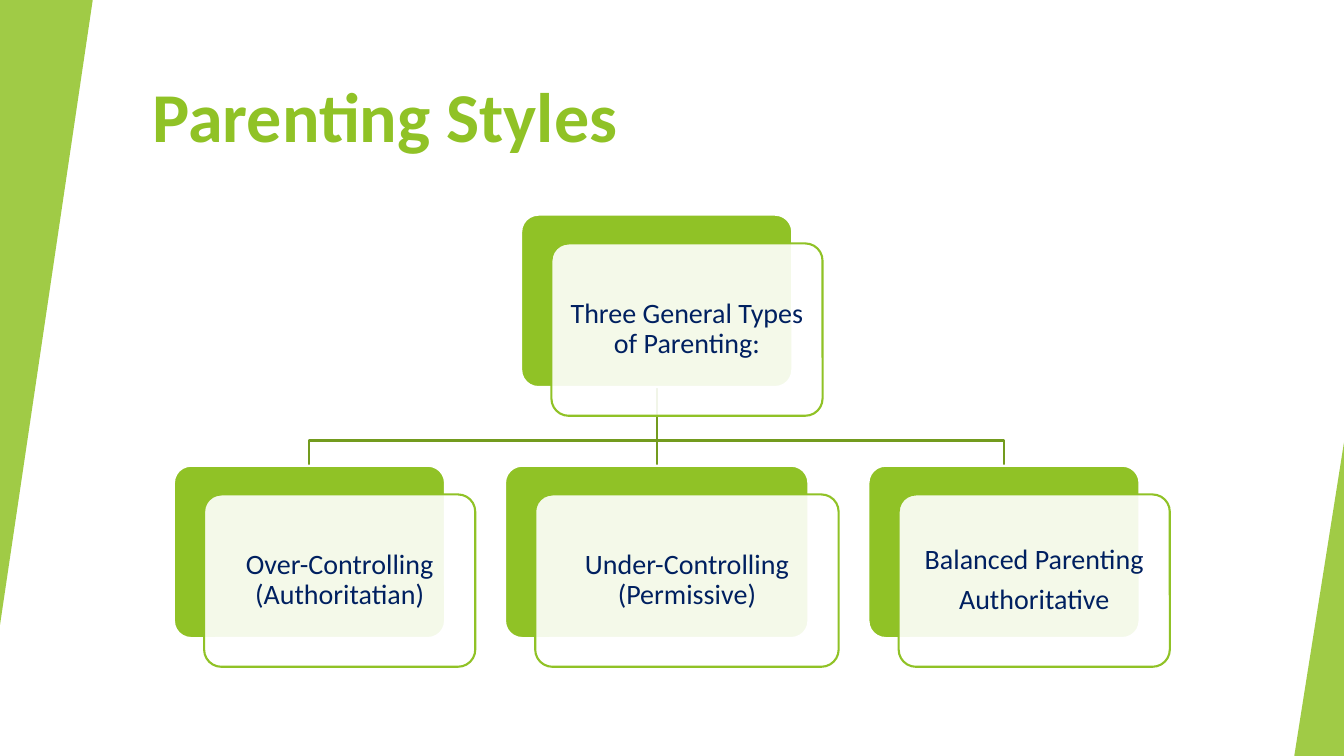
from lxml.etree import SubElement
from pptx import Presentation
from pptx.dml.color import RGBColor
from pptx.enum.shapes import MSO_SHAPE
from pptx.enum.text import MSO_ANCHOR, PP_ALIGN
from pptx.oxml.ns import qn
from pptx.util import Inches, Pt

GREEN, DARK_GREEN, NAVY, WHITE = "90C226", "739B1E", "002060", "FFFFFF"
COLS, ROWS = 133.33, 75  # grid over the slide


def rgb(value):
    return RGBColor.from_string(value)


class SlideBuilder:
    font = "Calibri"
    line_width = Pt(1.5)

    def __init__(self, prs):
        self.s = prs.slides.add_slide(prs.slide_layouts[5])
        self.col = prs.slide_width / COLS
        self.row = prs.slide_height / ROWS

    def box(self, x, y, w, h):
        return [round(v) for v in (x * self.col, y * self.row, w * self.col, h * self.row)]

    def title(self, text, *area):
        sp = self.s.shapes.title
        sp.left, sp.top, sp.width, sp.height = self.box(*area)
        tf = sp.text_frame
        tf.text = text
        tf.vertical_anchor = MSO_ANCHOR.TOP
        p = tf.paragraphs[0]
        p.alignment = PP_ALIGN.LEFT
        self.style(p, 50, GREEN, bold=True)

    def style(self, p, size, color, bold=False):
        f = p.font
        f.name, f.size, f.bold = self.font, Pt(size), bold
        f.color.rgb = rgb(color)

    def shape(self, kind, area, adj, fill, alpha=100, line=None):
        sp = self.s.shapes.add_shape(kind, *self.box(*area))
        sp.shadow.inherit = False
        sp.adjustments[0] = adj
        sp.fill.solid()
        sp.fill.fore_color.rgb = rgb(fill)
        if alpha < 100:
            clr = sp.fill._xPr.find(qn("a:solidFill"))[0]
            SubElement(clr, qn("a:alpha")).set("val", str(alpha * 1000))
        if line:
            sp.line.color.rgb = rgb(line)
            sp.line.width = self.line_width
        else:
            sp.line.fill.background()
        return sp

    def wedge(self, *area, rotation=0):
        sp = self.shape(MSO_SHAPE.ISOSCELES_TRIANGLE, area, 1, GREEN, alpha=85)
        sp.rotation = rotation

    def branch(self, *points):
        pts = [(round(x * self.col), round(y * self.row)) for x, y in points]
        builder = self.s.shapes.build_freeform(*pts[0])
        builder.add_line_segments(pts[1:], close=False)
        sp = builder.convert_to_shape()
        sp.shadow.inherit = False
        sp.fill.background()
        sp.line.color.rgb = rgb(DARK_GREEN)
        sp.line.width = self.line_width

    def card(self, center, top, width, lines, height=17.1, offset=(3, 2.85), inset=0.13):
        left = center - width / 2
        self.shape(MSO_SHAPE.ROUNDED_RECTANGLE, (left, top, width, height), 0.1, GREEN, line=WHITE)
        front = (left + offset[0], top + offset[1], width, height)
        sp = self.shape(MSO_SHAPE.ROUNDED_RECTANGLE, front, 0.1, WHITE, alpha=90, line=GREEN)
        tf = sp.text_frame
        tf.word_wrap = True
        tf.vertical_anchor = MSO_ANCHOR.MIDDLE
        tf.margin_left = tf.margin_right = tf.margin_top = tf.margin_bottom = Inches(inset)
        tf.text = "\n".join(lines)
        for p in tf.paragraphs:
            p.alignment = PP_ALIGN.CENTER
            p.line_spacing = 0.9
            p.space_after = Pt(7)
            self.style(p, 20, NAVY)


def main():
    prs = Presentation()
    prs.slide_width, prs.slide_height = Inches(13.33), Inches(7.5)
    slide = SlideBuilder(prs)

    # Title and side wedges
    slide.title("Parenting Styles", 14.1, 6.7, 111.5, 12)
    slide.wedge(0, 0, 9.2, 62, rotation=180)
    slide.wedge(128.4, 43.9, 4.93, 31.1)

    # Tree geometry
    middle, step = 65.15, 34.45
    root_top, root_bottom, bend, child_top = 21.3, 38.4, 43.7, 46.2
    children = [
        (26.9, ["Over-Controlling (Authoritatian)"]),
        (30.1, ["Under-Controlling (Permissive)"]),
        (26.9, ["Balanced Parenting", "Authoritative"]),
    ]
    centers = [middle + (i - 1) * step for i in range(len(children))]

    # Branches
    for x in centers:
        if x == middle:
            slide.branch((x, root_bottom), (x, child_top))
        else:
            slide.branch((middle, root_bottom), (middle, bend), (x, bend), (x, child_top))

    # Cards
    slide.card(middle, root_top, 26.9, ["Three General Types of Parenting:"])
    for x, (width, lines) in zip(centers, children):
        slide.card(x, child_top, width, lines)

    prs.save("out.pptx")


if __name__ == "__main__":
    main()
